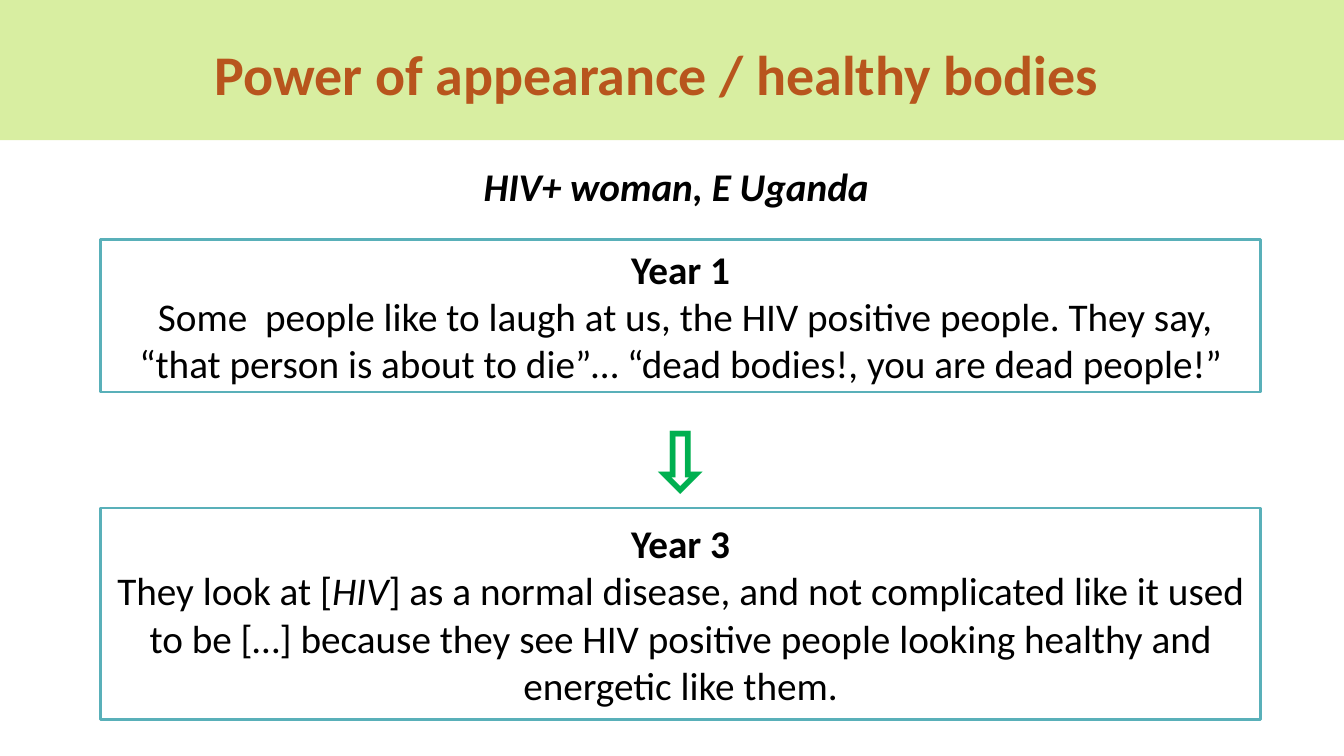
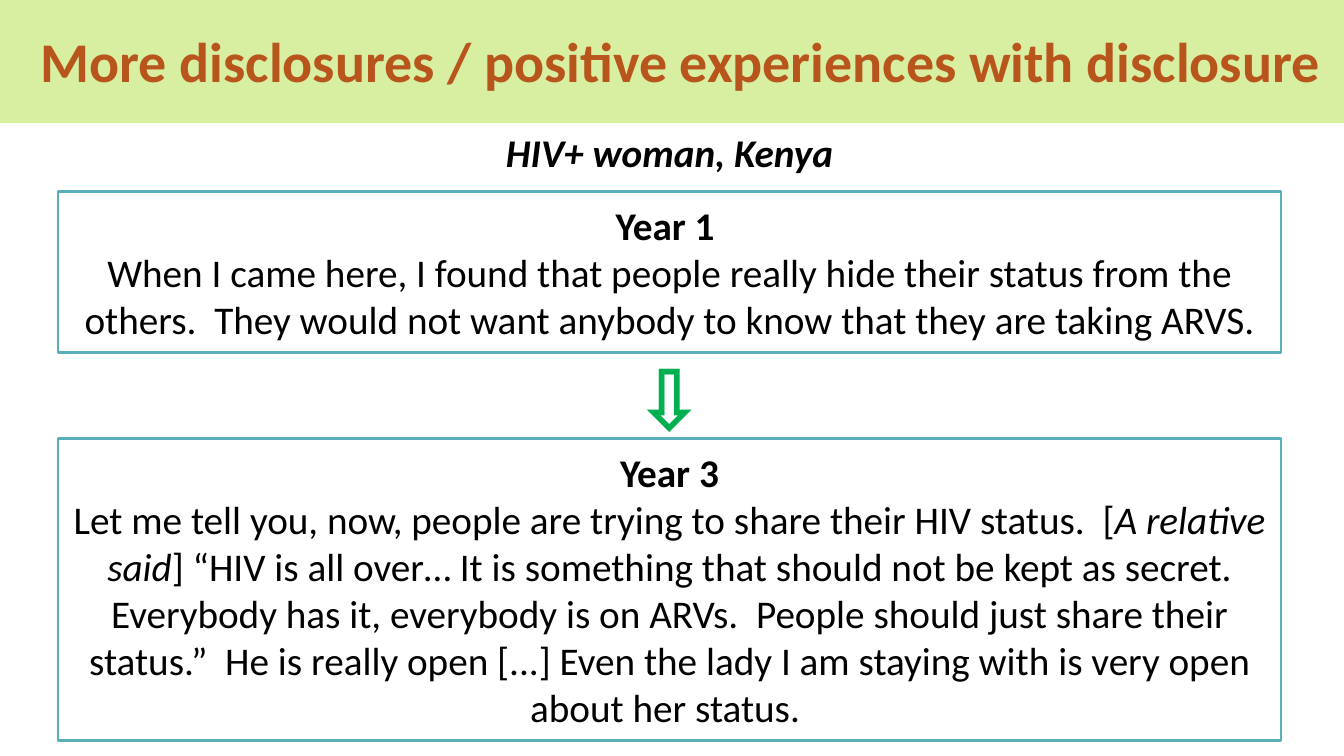
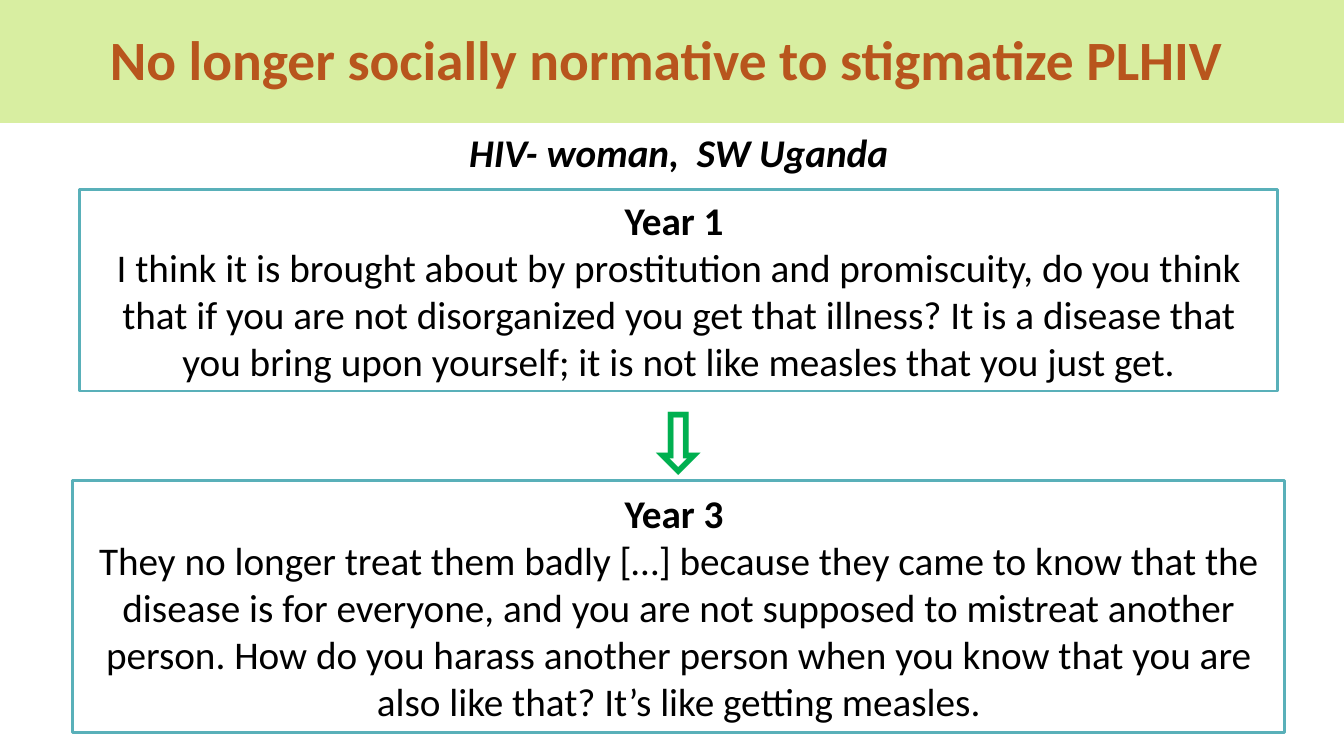
from dataclasses import dataclass

from pptx import Presentation
from pptx.dml.color import RGBColor
from pptx.enum.shapes import MSO_SHAPE as SHAPE
from pptx.enum.text import MSO_ANCHOR as ANCHOR, PP_ALIGN as ALIGN
from pptx.util import Emu, Pt

PX = 9144
WIDTH, HEIGHT = 1333, 750
BAND, TITLE, OUTLINE, ARROW = "D8EEA1", "B8551D", "59B0B9", "00B050"
WHITE, BLACK = "FFFFFF", "000000"
TITLE_H, SPEAKER_W, ARROW_W, ARROW_H = 91, 530, 162, 92


@dataclass
class Quote:
    """A year heading and its quotation, as (text, italic) pieces, in a box."""
    heading: str
    pieces: list
    top: int
    width: int
    height: int


@dataclass
class Comparison:
    """The content of one slide and the places that differ between slides."""
    title: str
    title_box: tuple
    band_h: int
    speaker: str
    speaker_top: int
    axis: int
    before: Quote
    arrow_gap: int
    after: Quote
    title_size: float = 40
    speaker_spacing: float = 1.0


def px(n):
    """Turn px into EMU."""
    return Emu(round(n * PX))


def rgb(value):
    """Turn a hex string into a colour."""
    return RGBColor.from_string(value)


def centred(axis, top, width, height):
    """Give the box of this size whose middle lies on a vertical axis."""
    return axis - width / 2, top, width, height


def add_rect(slide, box, fill, line=None):
    """Add a flat rectangle, outlined if a line colour is given."""
    sp = slide.shapes.add_shape(SHAPE.RECTANGLE, *map(px, box))
    sp.shadow.inherit = False
    sp.fill.solid()
    sp.fill.fore_color.rgb = rgb(fill)
    if line:
        sp.line.color.rgb = rgb(line)
        sp.line.width = Pt(2)
    else:
        sp.line.fill.background()
    return sp


def add_run(p, text, size, color=BLACK, bold=False, italic=False, name="Calibri"):
    """Append a formatted run to a paragraph."""
    r = p.add_run()
    r.text = text
    r.font.name, r.font.size = name, Pt(size)
    r.font.bold, r.font.italic = bold, italic
    r.font.color.rgb = rgb(color)


def add_label(slide, box, text, size, anchor=ANCHOR.TOP, spacing=1.0, **style):
    """Add one centred, bold line of text without a frame."""
    tf = slide.shapes.add_textbox(*map(px, box)).text_frame
    tf.word_wrap = True
    tf.vertical_anchor = anchor
    p = tf.paragraphs[0]
    p.alignment, p.line_spacing = ALIGN.CENTER, spacing
    add_run(p, text, size, bold=True, **style)


def add_header(slide, item):
    """Add the coloured band and the title."""
    add_rect(slide, (0, 0, WIDTH, item.band_h), BAND)
    left, top, width = item.title_box
    add_label(slide, (left, top, width, TITLE_H), item.title, item.title_size,
              ANCHOR.MIDDLE, color=TITLE)


def add_quote(slide, axis, quote):
    """Add an outlined box with a year and what was said then."""
    box = centred(axis, quote.top, quote.width, quote.height)
    tf = add_rect(slide, box, WHITE, OUTLINE).text_frame
    tf.word_wrap = True
    tf.vertical_anchor = ANCHOR.MIDDLE
    p = tf.paragraphs[0]
    p.alignment = ALIGN.CENTER
    add_run(p, quote.heading, 28, bold=True)
    p = tf.add_paragraph()
    p.alignment = ALIGN.CENTER
    for text, italic in quote.pieces:
        add_run(p, text, 28, italic=italic)


def add_comparison(prs, item):
    """Add a slide that sets year 1 above year 3."""
    slide = prs.slides.add_slide(prs.slide_layouts[6])
    add_header(slide, item)
    add_quote(slide, item.axis, item.after)
    add_quote(slide, item.axis, item.before)
    add_label(slide, centred(item.axis, item.speaker_top, SPEAKER_W, 57),
              item.speaker, 28, spacing=item.speaker_spacing, italic=True)
    arrow_top = item.before.top + item.before.height + item.arrow_gap
    add_label(slide, centred(item.axis, arrow_top, ARROW_W, ARROW_H),
              "⇩", 60, spacing=0.8, color=ARROW, name="Arial")


COMPARISONS = [
    Comparison(
        title="Power of appearance / healthy bodies",
        title_box=(53, 27, 1196), band_h=139,
        speaker="HIV+ woman, E Uganda ", speaker_top=151, speaker_spacing=1.1,
        axis=675, arrow_gap=31,
        before=Quote("Year 1", [
            (" Some  people like to laugh at us, the HIV positive people. They say, "
             "“that person is about to die”… “dead bodies!, you are dead people!”",
             False)], 238, 1150, 151),
        after=Quote("Year 3", [
            ("They look at [", False), ("HIV", True),
            ("] as a normal disease, and not complicated like it used to be […] "
             "because they see HIV positive people looking healthy and energetic "
             "like them.", False)], 504, 1150, 210)),
    Comparison(
        title="More disclosures / positive experiences with disclosure",
        title_box=(16, 14, 1318), band_h=122,
        speaker="HIV+ woman, Kenya", speaker_top=122,
        axis=664, arrow_gap=8,
        before=Quote("Year 1 ", [
            ("When I came here, I found that people really hide their status from "
             "the others.  They would not want anybody to know that they are taking "
             "ARVS.", False)], 190, 1213, 160),
        after=Quote("Year 3", [
            ("Let me tell you, now, people are trying to share their HIV status.  [",
             False), ("A relative said", True),
            ("] “HIV is all over… It is something that should not be kept as secret. "
             "Everybody has it, everybody is on ARVs.  People should just share "
             "their status.”  He is really open [...] Even the lady I am staying "
             "with is very open about her status. ", False)], 435, 1213, 300)),
    Comparison(
        title="No longer socially normative to stigmatize PLHIV ",
        title_box=(92, 12, 1150), band_h=122, title_size=39.6,
        speaker="HIV- woman,  SW Uganda", speaker_top=122,
        axis=673, arrow_gap=13,
        before=Quote("Year 1 ", [
            ("I think it is brought about by prostitution and promiscuity, do you "
             "think that if you are not disorganized you get that illness? It is a "
             "disease that you bring upon yourself; it is not like measles that you "
             "just get.", False)], 188, 1188, 200),
        after=Quote("Year 3 ", [
            ("They no longer treat them badly […] because they came to know that "
             "the disease is for everyone, and you are not supposed to mistreat "
             "another person. How do you harass another person when you know that "
             "you are also like that? It’s like getting measles.", False)],
            477, 1202, 250)),
]


def main():
    """Build the presentation."""
    prs = Presentation()
    prs.slide_width, prs.slide_height = px(WIDTH), px(HEIGHT)
    for item in COMPARISONS:
        add_comparison(prs, item)
    prs.save("out.pptx")


if __name__ == "__main__":
    main()
